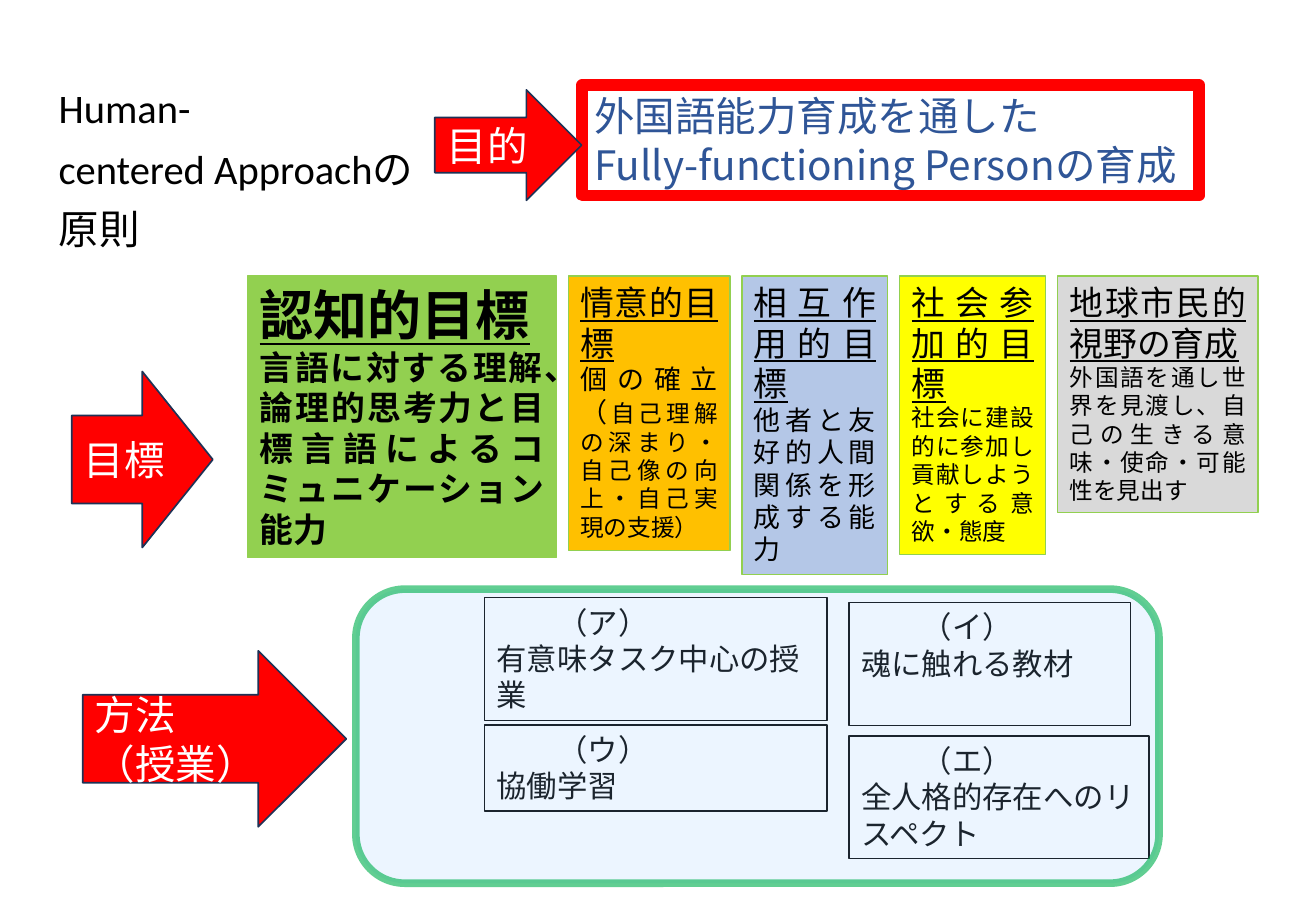
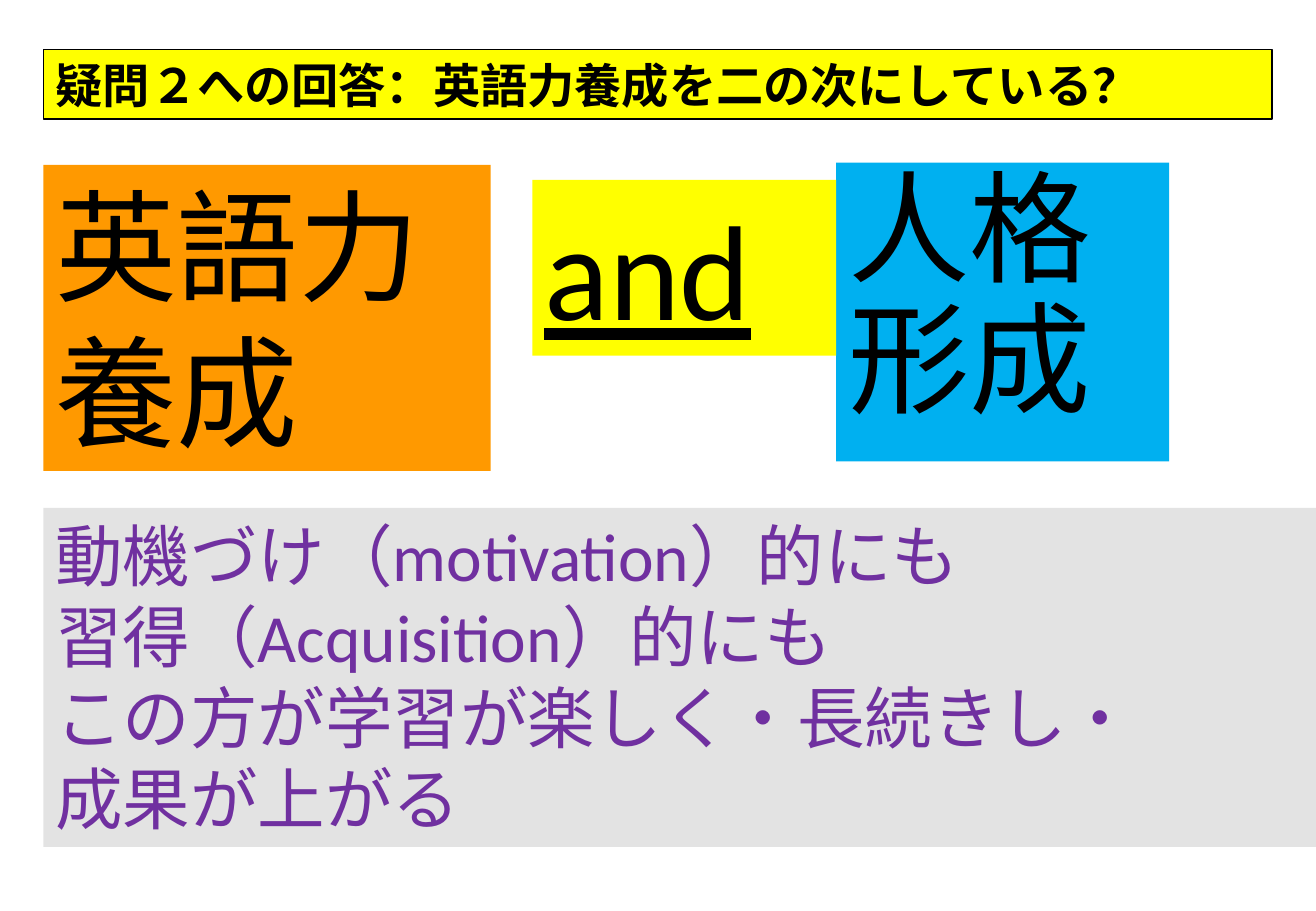
from lxml import etree
from pptx import Presentation
from pptx.dml.color import RGBColor
from pptx.enum.shapes import MSO_SHAPE
from pptx.enum.text import MSO_ANCHOR, MSO_AUTO_SIZE, PP_ALIGN
from pptx.oxml.ns import qn
from pptx.util import Cm, Pt

RECT, ROUNDED, ARROW = MSO_SHAPE.RECTANGLE, MSO_SHAPE.ROUNDED_RECTANGLE, MSO_SHAPE.RIGHT_ARROW
TOP, MIDDLE = MSO_ANCHOR.TOP, MSO_ANCHOR.MIDDLE
LEFT, JUSTIFY = PP_ALIGN.LEFT, PP_ALIGN.JUSTIFY

COLORS = {
    "black": "000000", "white": "FFFFFF", "red": "FF0000", "yellow": "FFFF00",
    "navy": "1E3256", "blue": "2F5597", "lime": "92D050", "gold": "FFC000",
    "periwinkle": "B4C7E7", "silver": "D9D9D9", "sky": "99CCFF", "green": "00B050",
    "orange": "FF9900", "cyan": "00B0F0", "gray": "DBDBDB", "purple": "7030A0",
}
LATIN, SERIF, TIMES, JAPANESE = "Calibri", "Cambria", "Times New Roman", "Noto Sans CJK JP"
SLIDE_WIDTH, SLIDE_HEIGHT = 27.51, 19.05

PRINCIPLE = ["Human-", "centered Approachの", "原則"]
PURPOSE = ["外国語能力育成を通した", "Fully-functioning Personの育成"]
STAGES = [
    (["目的"], (9.09, 1.88, 3.07, 2.31)),
    (["目標"], (1.5, 7.77, 2.95, 3.68)),
    (["方法", "（授業）"], (1.73, 13.61, 5.51, 3.68)),
]
GOALS = [
    ("認知的目標", 32, SERIF,
     [("言語に対する理解、論理的思考力と目標言語によるコミュニケーション能力", 20)],
     SERIF, "lime", 6.45, 5.89, True),
    ("情意的目標", 20, SERIF,
     [("個の確立（", 16), ("自己理解の深まり・自己像の向上・自己実現の支援）", 14)],
     SERIF, "gold", 3.38, 5.74, False),
    ("相互作用的目標", 20, TIMES,
     [("他者と友好的人間関係を形成する能力", 16)],
     TIMES, "periwinkle", 3.05, 6.25, False),
    ("社会参加的目標", 20, SERIF,
     [("社会に建設的に参加し貢献しようとする意欲・態度", 14)],
     SERIF, "yellow", 3.05, 5.82, False),
    ("地球市民的視野の育成", 20, TIMES,
     [("外国語を通し世界を見渡し、自己の生きる意味・使命・可能性を見出す", 14)],
     SERIF, "silver", 4.19, 4.95, False),
]
GOALS_LEFT, GOALS_TOP, GOALS_GAP = 5.18, 5.77, 0.25
METHODS = [
    ("（ア）", "有意味タスク中心の授業", None, (10.13, 12.5, 7.16, 2.57)),
    ("（イ）", "魂に触れる教材", None, (17.75, 12.6, 5.89, 2.57)),
    ("（ウ）", "協働学習", "white", (10.13, 15.16, 7.16, 1.8)),
    ("（エ）", "全人格的存在へのリスペクト", "white", (17.75, 15.39, 6.27, 2.57)),
]
METHOD_FRAME = (7.44, 12.32, 16.79, 6.15)

QUESTION = "疑問２への回答：英語力養成を二の次にしている？"
MARGIN = 0.91
PAIRED_AIMS = [
    ("英語力養成", 72, LATIN, "orange", (MARGIN, 3.45, 9.35, 6.4), {}),
    ("人格形成", 72, JAPANESE, "cyan", (17.48, 3.4, 6.96, 6.25), {"spacing": 0.9, "before": 10}),
    ("and", 80, LATIN, "yellow", (11.13, 3.76, 6.35, 3.68), {"underline": True}),
]
REASONS = ["動機づけ（motivation）的にも", "習得（Acquisition）的にも",
           "この方が学習が楽しく・長続きし・", "成果が上がる"]


def rgb(name):
    return RGBColor.from_string(COLORS[name])


def place(shape, box):
    shape.left, shape.top, shape.width, shape.height = map(Cm, box)


def paint(shape, fill=None, line=None, width=0.75):
    if fill:
        shape.fill.solid()
        shape.fill.fore_color.rgb = rgb(fill)
    else:
        shape.fill.background()
    if line:
        shape.line.color.rgb = rgb(line)
        shape.line.width = Pt(width)
    else:
        shape.line.fill.background()


def add_box(slide, kind, box, fill=None, line=None, width=0.75):
    shape = slide.shapes.add_shape(kind, *map(Cm, box))
    shape.shadow.inherit = False
    paint(shape, fill, line, width)
    return shape


def set_alpha(fill_format, percent):
    color = fill_format.fore_color
    for node in color._xFill.iter(qn("a:srgbClr")):
        etree.SubElement(node, qn("a:alpha")).set("val", str(percent * 1000))


def start_text(shape, anchor=TOP):
    frame = shape.text_frame
    frame.word_wrap = True
    frame.auto_size = MSO_AUTO_SIZE.NONE
    frame.vertical_anchor = anchor
    return frame


def add_paragraph(frame, index, runs, font, color="black", align=LEFT, bold=False,
                  underline=False, spacing=None, before=None, indent=None):
    paragraph = frame.paragraphs[0] if index == 0 else frame.add_paragraph()
    paragraph.alignment = align
    if spacing:
        paragraph.line_spacing = spacing
    if before:
        paragraph.space_before = Pt(before)
    if indent:
        paragraph._p.get_or_add_pPr().set("marL", str(Cm(indent)))
    for text, size in runs:
        run = paragraph.add_run()
        run.text = text
        run.font.size = Pt(size)
        run.font.name = font
        run.font.bold = bold
        run.font.underline = underline
        run.font.color.rgb = rgb(color)
        latin = run.font._element.find(qn("a:latin"))
        east_asian = etree.Element(qn("a:ea"))
        east_asian.set("typeface", JAPANESE)
        latin.addnext(east_asian)


def write_lines(shape, lines, size, font=LATIN, anchor=TOP, **style):
    frame = start_text(shape, anchor)
    for index, line in enumerate(lines):
        add_paragraph(frame, index, [(line, size)], font, **style)


def build_principles(slide):
    place(slide.shapes.title, (0.97, 1.73, 8.6, 4.2))
    write_lines(slide.shapes.title, PRINCIPLE, 24, spacing=0.9, before=10)

    purpose = add_box(slide, RECT, (12.17, 1.78, 12.9, 2.31), line="red", width=6.75)
    write_lines(purpose, PURPOSE, 24, JAPANESE, color="blue")

    left = GOALS_LEFT
    for heading, size, heading_font, body, body_font, fill, width, height, bold in GOALS:
        goal = add_box(slide, RECT, (left, GOALS_TOP, width, height), fill, "lime")
        frame = start_text(goal)
        add_paragraph(frame, 0, [(heading, size)], heading_font, align=JUSTIFY,
                      bold=bold, underline=True)
        add_paragraph(frame, 1, body, body_font, align=JUSTIFY, bold=bold)
        left += width + GOALS_GAP

    for label, method, fill, box in METHODS:
        frame = start_text(add_box(slide, RECT, box, fill, "black"))
        add_paragraph(frame, 0, [(label, 18)], LATIN, indent=1.27)
        add_paragraph(frame, 1, [(method, 18)], LATIN)

    method_frame = add_box(slide, ROUNDED, METHOD_FRAME, "sky", "green", 4.5)
    set_alpha(method_frame.fill, 18)
    set_alpha(method_frame.line.fill, 61)

    for lines, box in STAGES:
        stage = add_box(slide, ARROW, box, "red", "navy", 1)
        write_lines(stage, lines, 24, anchor=MIDDLE, color="white")


def build_answer(slide):
    question = slide.shapes.title
    place(question, (MARGIN, 1.04, 25.68, 1.45))
    paint(question, "yellow", "black")
    write_lines(question, [QUESTION], 28, bold=True)

    for text, size, font, fill, box, style in PAIRED_AIMS:
        write_lines(add_box(slide, RECT, box, fill), [text], size, font, **style)

    reasons = add_box(slide, RECT, (MARGIN, 10.62, SLIDE_WIDTH - MARGIN, 7.09), "gray")
    set_alpha(reasons.fill, 76)
    write_lines(reasons, REASONS, 40, color="purple")


def main():
    deck = Presentation()
    deck.slide_width, deck.slide_height = Cm(SLIDE_WIDTH), Cm(SLIDE_HEIGHT)
    title_only = deck.slide_layouts[5]
    for build in (build_principles, build_answer):
        build(deck.slides.add_slide(title_only))
    deck.save("out.pptx")


if __name__ == "__main__":
    main()
